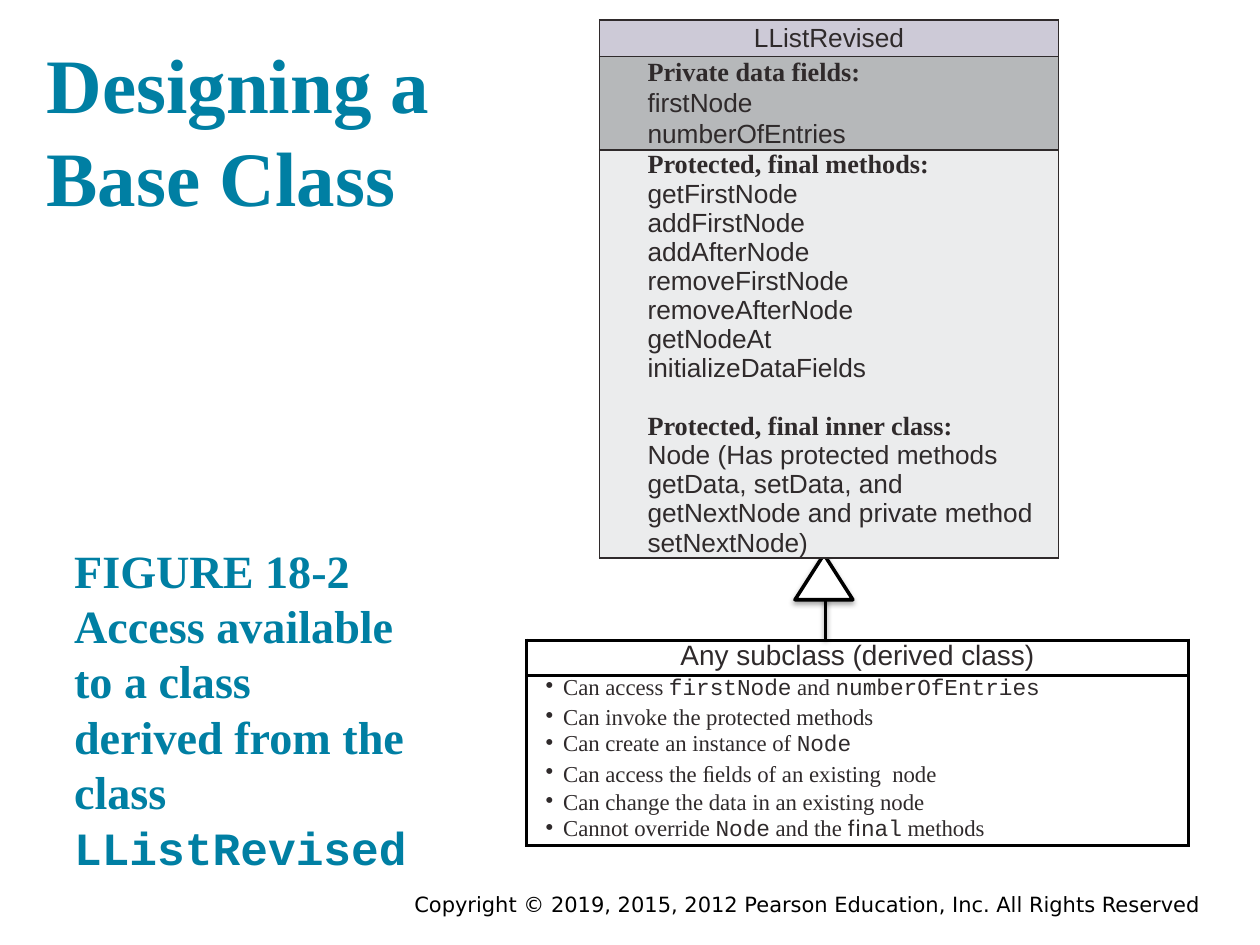
"""Build the slide on designing a base class, with its class diagram."""
from dataclasses import dataclass
from typing import Optional, Union

from lxml.etree import SubElement
from pptx import Presentation
from pptx.dml.color import RGBColor
from pptx.enum.shapes import MSO_CONNECTOR, MSO_SHAPE
from pptx.enum.text import MSO_ANCHOR, PP_ALIGN
from pptx.oxml import parse_xml
from pptx.oxml.ns import nsdecls, qn
from pptx.util import Inches, Pt


@dataclass(frozen=True)
class Theme:
    teal: str = "007FA3"
    ink: str = "2F2A2B"
    black: str = "000000"
    white: str = "FFFFFF"
    lilac: str = "CDCAD7"
    grey: str = "B6B8BA"
    pale: str = "EBECED"
    serif: str = "Times New Roman"
    sans: str = "Arial"
    mono: str = "Courier New"
    footer_face: str = "DejaVu Sans"
    title: float = 44
    caption: float = 26.4
    subclass: float = 16
    member: float = 15
    member_pitch: float = 16.6
    bullet: float = 13
    bullet_pitch: float = 15.2
    footer: float = 12


THEME = Theme()
COLUMNS, ROWS = 100, 75
DECK_WIDTH, DECK_HEIGHT = Inches(10), Inches(7.5)


@dataclass(frozen=True)
class Area:
    left: float
    top: float
    width: float
    height: float

    def emu(self) -> tuple:
        return (across(self.left), down(self.top), across(self.width), down(self.height))


@dataclass(frozen=True)
class Span:
    text: str
    face: str = THEME.serif
    bold: bool = False


@dataclass(frozen=True)
class Line:
    spans: tuple
    before: float = 0


@dataclass(frozen=True)
class Compartment:
    height: float
    lines: list
    text_format: dict
    fill: Optional[str] = None
    anchor: MSO_ANCHOR = MSO_ANCHOR.MIDDLE


def across(columns: float) -> int:
    return int(DECK_WIDTH * columns / COLUMNS)


def down(rows: float) -> int:
    return int(DECK_HEIGHT * rows / ROWS)


def heading(text: str, before: float = 0) -> Line:
    return Line((Span(text, bold=True),), before)


def plain(text: str, face: str = THEME.sans, before: float = 0) -> Line:
    return Line((Span(text, face),), before)


def write(frame, lines: list, *, size: float, color: str = THEME.ink, align=PP_ALIGN.LEFT,
          spacing: Union[float, Pt] = 1.0, indent: float = 0, hanging: float = 0,
          bullet: Optional[str] = None) -> None:
    frame.word_wrap = True
    for index, line in enumerate(lines):
        para = frame.paragraphs[0] if index == 0 else frame.add_paragraph()
        properties = para._p.get_or_add_pPr()
        properties.set("marL", str(across(indent)))
        properties.set("indent", str(-across(hanging)))
        if bullet:
            SubElement(properties, qn("a:buChar")).set("char", bullet)
        para.alignment = align
        para.line_spacing = spacing
        para.space_before = Pt(line.before)
        for item in line.spans:
            span = para.add_run()
            span.text = item.text
            span.font.name = item.face
            span.font.size = Pt(size)
            span.font.bold = item.bold
            span.font.color.rgb = RGBColor.from_string(color)


def set_frame(frame, margin: float, anchor: MSO_ANCHOR) -> None:
    frame.margin_left = frame.margin_right = across(margin)
    frame.margin_top = frame.margin_bottom = down(margin)
    frame.vertical_anchor = anchor


def add_text(page, area: Area, lines: list, margin: float, anchor: MSO_ANCHOR, **text_format) -> None:
    box = page.shapes.add_textbox(*area.emu())
    set_frame(box.text_frame, margin, anchor)
    write(box.text_frame, lines, **text_format)


def add_shadow(shape) -> None:
    shape._element.spPr.append(parse_xml(
        f'<a:effectLst {nsdecls("a")}><a:outerShdw blurRad="{Pt(3)}" dist="{Pt(1.8)}" '
        f'dir="5400000" rotWithShape="0"><a:srgbClr val="{THEME.black}">'
        '<a:alpha val="35000"/></a:srgbClr></a:outerShdw></a:effectLst>'))


def add_inheritance_arrow(page, center: float, tail: float, stem_top: float, head: Area) -> None:
    stem = page.shapes.add_connector(
        MSO_CONNECTOR.STRAIGHT, across(center), down(tail), across(center), down(stem_top))
    tip = page.shapes.add_shape(MSO_SHAPE.RIGHT_ARROW, *head.emu())
    tip.rotation = 270
    tip.adjustments[0], tip.adjustments[1] = 0.32, 1.24
    tip.fill.solid()
    tip.fill.fore_color.rgb = RGBColor.from_string(THEME.white)
    for shape in (stem, tip):
        shape.line.color.rgb = RGBColor.from_string(THEME.black)
        shape.line.width = Pt(2)
        add_shadow(shape)


def add_borders(cell, color: str, width: float) -> None:
    properties = cell._tc.get_or_add_tcPr()
    for index, side in enumerate("LRTB"):
        properties.insert(index, parse_xml(
            f'<a:ln{side} {nsdecls("a")} w="{Pt(width)}"><a:solidFill>'
            f'<a:srgbClr val="{color}"/></a:solidFill></a:ln{side}>'))


def add_class_table(page, left: float, top: float, width: float, compartments: list,
                    border: str, border_width: float) -> None:
    area = Area(left, top, width, sum(part.height for part in compartments))
    table = page.shapes.add_table(len(compartments), 1, *area.emu()).table
    table.first_row = table.horz_banding = False
    for row, part in zip(table.rows, compartments):
        row.height = down(part.height)
        cell = row.cells[0]
        cell.margin_left = cell.margin_right = across(0.7)
        cell.margin_top = cell.margin_bottom = 0
        cell.vertical_anchor = part.anchor
        if part.fill:
            cell.fill.solid()
            cell.fill.fore_color.rgb = RGBColor.from_string(part.fill)
        else:
            cell.fill.background()
        add_borders(cell, border, border_width)
        write(cell.text_frame, part.lines, **part.text_format)


def main() -> None:
    deck = Presentation()
    deck.slide_width, deck.slide_height = DECK_WIDTH, DECK_HEIGHT
    page = deck.slides.add_slide(deck.slide_layouts[5])

    title = page.shapes.title
    title.left, title.top, title.width, title.height = Area(2.7, 0, 37.8, 18.6).emu()
    set_frame(title.text_frame, 1, MSO_ANCHOR.BOTTOM)
    write(title.text_frame, [heading("Designing a Base Class")], size=THEME.title, color=THEME.teal)
    caption = Line((Span("FIGURE 18-2 Access available to a class derived from the class ", bold=True),
                    Span("LListRevised", THEME.mono, True)))
    add_text(page, Area(4.9, 40, 28.4, 30.4), [caption], 1, MSO_ANCHOR.BOTTOM,
             size=THEME.caption, color=THEME.teal)
    add_text(page, Area(17.5, 70.3, 78.3, 3.1),
             [plain("Copyright © 2019, 2015, 2012 Pearson Education, Inc. All Rights Reserved",
                    THEME.footer_face)],
             0.5, MSO_ANCHOR.TOP, size=THEME.footer, color=THEME.black, align=PP_ALIGN.RIGHT)

    add_inheritance_arrow(page, 65.5, 50.7, 44.2, Area(63.6, 43.5, 3.6, 4.6))

    members = dict(size=THEME.member, spacing=Pt(THEME.member_pitch), indent=3.1)
    fields = [heading("Private data fields:")]
    fields += [plain(name, before=1) for name in ("firstNode", "numberOfEntries")]
    methods = [heading("Protected, final methods:")]
    methods += [plain(name) for name in (
        "getFirstNode", "addFirstNode", "addAfterNode", "removeFirstNode",
        "removeAfterNode", "getNodeAt", "initializeDataFields")]
    methods += [heading("Protected, final inner class:", before=THEME.member_pitch),
                plain("Node (Has protected methods getData, setData, and getNextNode "
                      "and private method setNextNode)")]
    add_class_table(page, 47.6, 1.6, 36.4, [
        Compartment(2.9, [plain("LListRevised")],
                    dict(size=THEME.member, align=PP_ALIGN.CENTER), THEME.lilac),
        Compartment(7.4, fields, members, THEME.grey),
        Compartment(32.4, methods, members, THEME.pale),
    ], THEME.ink, 1)

    rights = [
        (Span("Can access "), Span("firstNode", THEME.mono), Span(" and "),
         Span("numberOfEntries", THEME.mono)),
        (Span("Can invoke the protected methods"),),
        (Span("Can create an instance of "), Span("Node", THEME.mono)),
        (Span("Can access the ﬁelds of an existing  node"),),
        (Span("Can change the data in an existing node"),),
        (Span("Cannot override "), Span("Node", THEME.mono), Span(" and the "),
         Span("ﬁnal", THEME.mono), Span(" methods")),
    ]
    add_class_table(page, 41.8, 50.8, 52.5, [
        Compartment(2.8, [plain("Any subclass (derived class)")],
                    dict(size=THEME.subclass, align=PP_ALIGN.CENTER), anchor=MSO_ANCHOR.TOP),
        Compartment(13.5, [Line(spans, min(index, 1)) for index, spans in enumerate(rights)],
                    dict(size=THEME.bullet, spacing=Pt(THEME.bullet_pitch), indent=2.2,
                         hanging=1.4, bullet="•"), anchor=MSO_ANCHOR.TOP),
    ], THEME.black, 2)
    deck.save("out.pptx")


if __name__ == "__main__":
    main()
